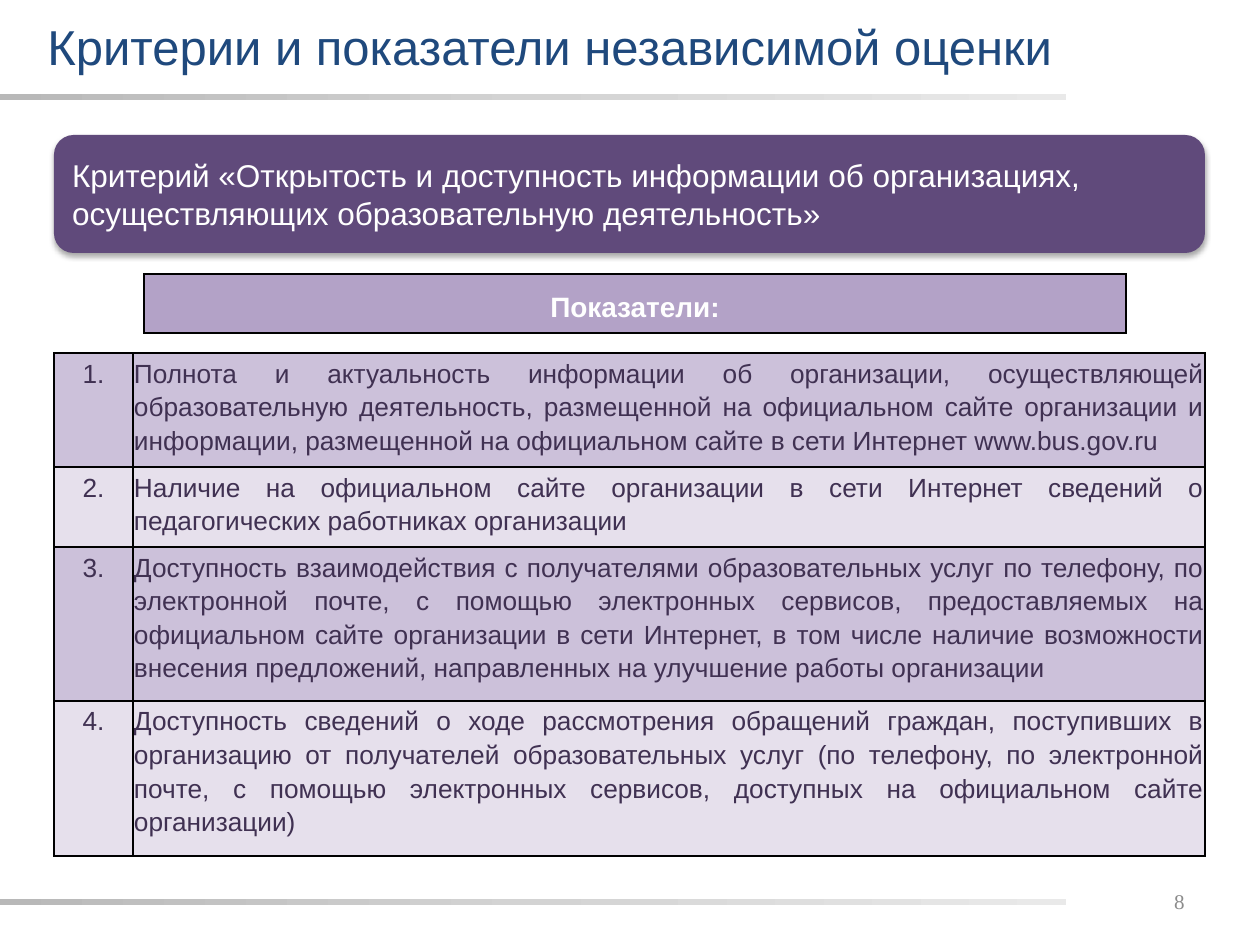
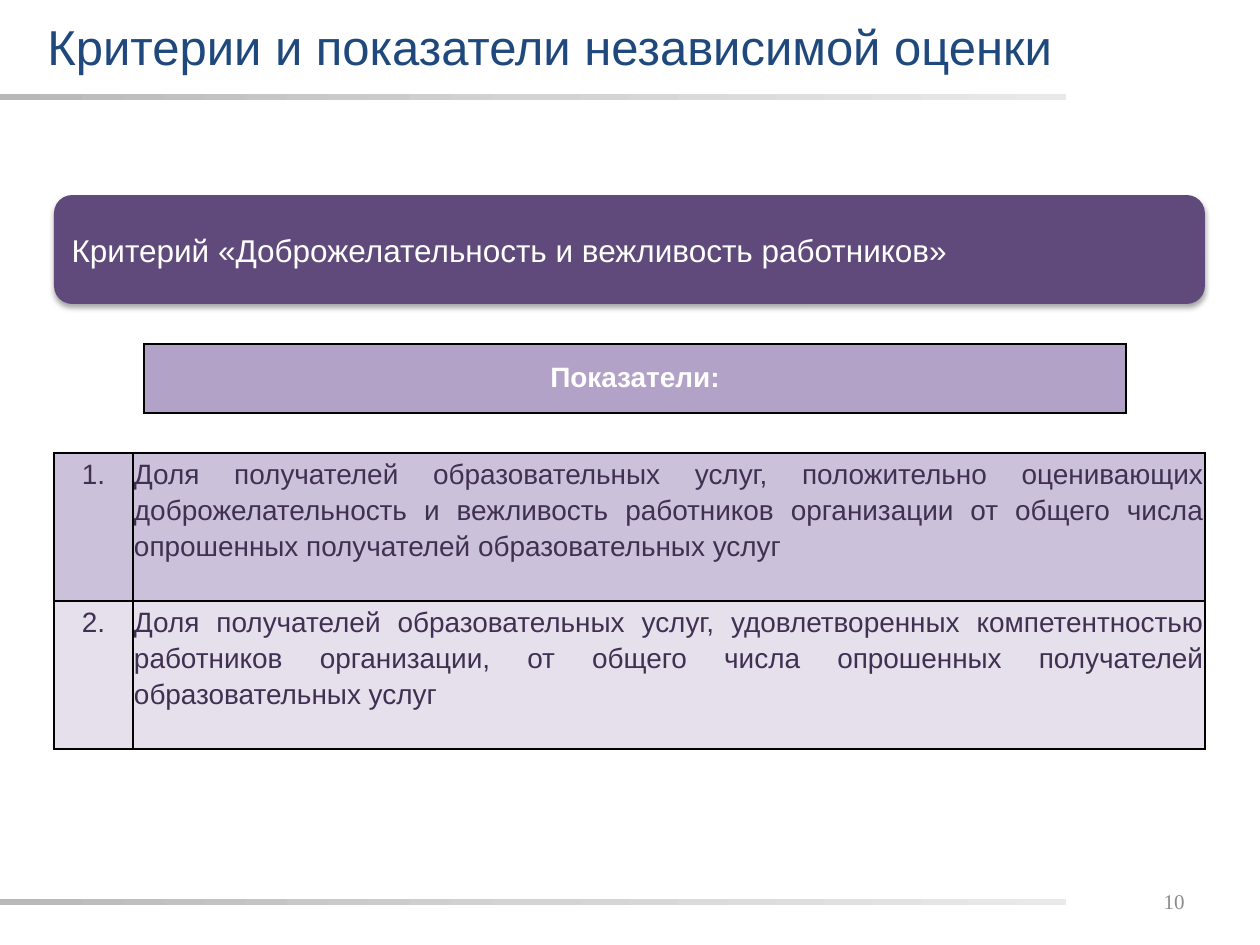
import copy

import pptx
import pptx.dml.color
import pptx.enum.dml
import pptx.enum.shapes
import pptx.enum.text
import pptx.oxml
import pptx.oxml.ns
import pptx.util

PX = 914400 // 126
ALIGN = pptx.enum.text.PP_ALIGN
ANCHOR = pptx.enum.text.MSO_ANCHOR
SHAPE = pptx.enum.shapes.MSO_SHAPE
NS = 'xmlns:a="http://schemas.openxmlformats.org/drawingml/2006/main"'

BLUE, WHITE, BLACK, GRAY = "1F497D", "FFFFFF", "000000", "8C8C8C"
PURPLE, LILAC, INK = "604A7B", "B3A2C7", "403152"
STRIPES = ("CCC1DA", "E6E0EC")
RULE_STOPS = ((0, "B8B8B8"), (0.5, "D3D3D3"), (1, "E9E9E9"))

TITLE = "Критерии и показатели независимой оценки"
TITLE_BOX = (35, -3, 1191, 97)
NUMBER_BOX = (903, 876, 294, 50)
RULE_BOXES = ((0, 94, 1066, 6), (0, 899, 1066, 6))
LEFT, WIDTH, NUMBER_WIDTH = 54, 1151, 79
LABEL_LEFT, LABEL_WIDTH = 144, 982

SLIDES = [
    dict(
        number="8", size=15,
        criterion="Критерий «Открытость и доступность информации об организациях, "
                  "осуществляющих образовательную деятельность»",
        banner=(135, 118), label=(274, 59), top=353,
        indicators=[
            (114, "Полнота и актуальность информации об организации, осуществляющей "
                  "образовательную деятельность, размещенной на официальном сайте организации "
                  "и информации, размещенной на официальном сайте в сети Интернет www.bus.gov.ru"),
            (80, "Наличие на официальном сайте организации в сети Интернет сведений о "
                 "педагогических работниках организации"),
            (154, "Доступность взаимодействия с получателями образовательных услуг по телефону, "
                  "по электронной почте, с помощью электронных сервисов, предоставляемых на "
                  "официальном сайте организации в сети Интернет, в том числе наличие возможности "
                  "внесения предложений, направленных на улучшение работы организации"),
            (155, "Доступность сведений о ходе рассмотрения обращений граждан, поступивших в "
                  "организацию от получателей образовательных услуг (по телефону, по электронной "
                  "почте, с помощью электронных сервисов, доступных на официальном сайте "
                  "организации)"),
        ],
    ),
    dict(
        number="10", size=16,
        criterion="Критерий «Доброжелательность и вежливость работников»",
        banner=(195, 109), label=(344, 69), top=453,
        indicators=[
            (148, "Доля получателей образовательных услуг, положительно оценивающих "
                  "доброжелательность и вежливость работников организации от общего числа "
                  "опрошенных получателей образовательных услуг"),
            (148, "Доля получателей образовательных услуг, удовлетворенных компетентностью "
                  "работников организации, от общего числа опрошенных получателей "
                  "образовательных услуг"),
        ],
    ),
]


def px(*lengths):
    """Turn px lengths into EMU."""
    return [length * PX for length in lengths]


def rgb(value):
    """Turn a hex string into a colour."""
    return pptx.dml.color.RGBColor.from_string(value)


def write(frame, text, size, color, font="Arial", bold=False, align=ALIGN.LEFT,
          anchor=ANCHOR.MIDDLE, spacing=1.0):
    """Put formatted text in a text frame."""
    frame.word_wrap = True
    frame.vertical_anchor = anchor
    paragraph = frame.paragraphs[0]
    paragraph.alignment = align
    paragraph.line_spacing = spacing
    run = paragraph.add_run()
    run.text = text
    run.font.size = pptx.util.Pt(size)
    run.font.name = font
    run.font.bold = bold
    run.font.color.rgb = rgb(color)


def add_text(slide, box, text, **style):
    """Add a text box."""
    write(slide.shapes.add_textbox(*px(*box)).text_frame, text, **style)


def add_rule(slide, box):
    """Add a horizontal band that fades to the right."""
    rule = slide.shapes.add_shape(SHAPE.RECTANGLE, *px(*box))
    rule.shadow.inherit = False
    rule.line.fill.background()
    rule.fill.gradient()
    rule.fill.gradient_angle = 0
    stops = rule._element.spPr.find(".//" + pptx.oxml.ns.qn("a:gsLst"))
    stops.insert(1, copy.deepcopy(stops[0]))
    for stop, (position, color) in zip(rule.fill.gradient_stops, RULE_STOPS):
        stop.position = position
        stop.color.rgb = rgb(color)


def add_frame(slide, number):
    """Add the title, both rules and the slide number."""
    for box in RULE_BOXES:
        add_rule(slide, box)
    add_text(slide, NUMBER_BOX, number, size=12, color=GRAY, font="Times New Roman",
             align=ALIGN.RIGHT)
    add_text(slide, TITLE_BOX, TITLE, size=28, color=BLUE)


def add_banner(slide, box, criterion):
    """Add the rounded criterion banner with a soft shadow."""
    banner = slide.shapes.add_shape(SHAPE.ROUNDED_RECTANGLE, *px(*box))
    banner.shadow.inherit = False
    banner.fill.solid()
    banner.fill.fore_color.rgb = rgb(PURPLE)
    banner.line.fill.background()
    banner._element.spPr.find(pptx.oxml.ns.qn("a:effectLst")).append(pptx.oxml.parse_xml(
        f'<a:outerShdw {NS} blurRad="40000" dist="23000" dir="5400000" rotWithShape="0">'
        f'<a:srgbClr val="{BLACK}"><a:alpha val="35000"/></a:srgbClr></a:outerShdw>'))
    write(banner.text_frame, criterion, size=18, color=WHITE)


def add_grid(slide, left, top, widths, heights):
    """Add an unstyled table with the given column widths and row heights."""
    box = px(left, top, sum(widths), sum(heights))
    grid = slide.shapes.add_table(len(heights), len(widths), *box).table
    grid.first_row = grid.horz_banding = False
    for column, width in zip(grid.columns, px(*widths)):
        column.width = width
    for row, height in zip(grid.rows, px(*heights)):
        row.height = height
    return grid


def fill_cell(cell, text, fill, top_inset=2, **style):
    """Give a cell its borders, fill, insets and text."""
    properties = cell._tc.get_or_add_tcPr()
    for side in "LRTB":
        properties.append(pptx.oxml.parse_xml(
            f'<a:ln{side} {NS} w="12700"><a:solidFill><a:srgbClr val="{BLACK}"/>'
            f'</a:solidFill></a:ln{side}>'))
    cell.fill.solid()
    cell.fill.fore_color.rgb = rgb(fill)
    cell.margin_left, cell.margin_top, cell.margin_right, cell.margin_bottom = px(
        1, top_inset, 1, 2)
    write(cell.text_frame, text, anchor=None, spacing=1.15, **style)
    cell.vertical_anchor = ANCHOR.TOP


def add_label(slide, top, height):
    """Add the heading cell above the indicators."""
    label = add_grid(slide, LABEL_LEFT, top, [LABEL_WIDTH], [height])
    fill_cell(label.cell(0, 0), "Показатели:", LILAC, top_inset=14, size=16, color=WHITE,
              bold=True, align=ALIGN.CENTER)


def add_indicators(slide, top, indicators, size):
    """Add the numbered table of indicators."""
    heights = [height for height, _ in indicators]
    grid = add_grid(slide, LEFT, top, [NUMBER_WIDTH, WIDTH - NUMBER_WIDTH], heights)
    for index, (_, indicator) in enumerate(indicators):
        style = dict(fill=STRIPES[index % 2], size=size, color=INK)
        fill_cell(grid.cell(index, 0), f"{index + 1}.", align=ALIGN.CENTER, **style)
        fill_cell(grid.cell(index, 1), indicator, align=ALIGN.JUSTIFY, **style)


def add_criterion_slide(deck, number, size, criterion, banner, label, top, indicators):
    """Add one slide for a criterion and its indicators."""
    slide = deck.slides.add_slide(deck.slide_layouts[6])
    add_frame(slide, number)
    add_indicators(slide, top, indicators, size)
    banner_top, banner_height = banner
    add_banner(slide, (LEFT, banner_top, WIDTH, banner_height), criterion)
    add_label(slide, *label)


def main():
    """Build the deck and save it."""
    deck = pptx.Presentation()
    deck.slide_width, deck.slide_height = px(1260, 945)
    for content in SLIDES:
        add_criterion_slide(deck, **content)
    deck.save("out.pptx")


if __name__ == "__main__":
    main()
